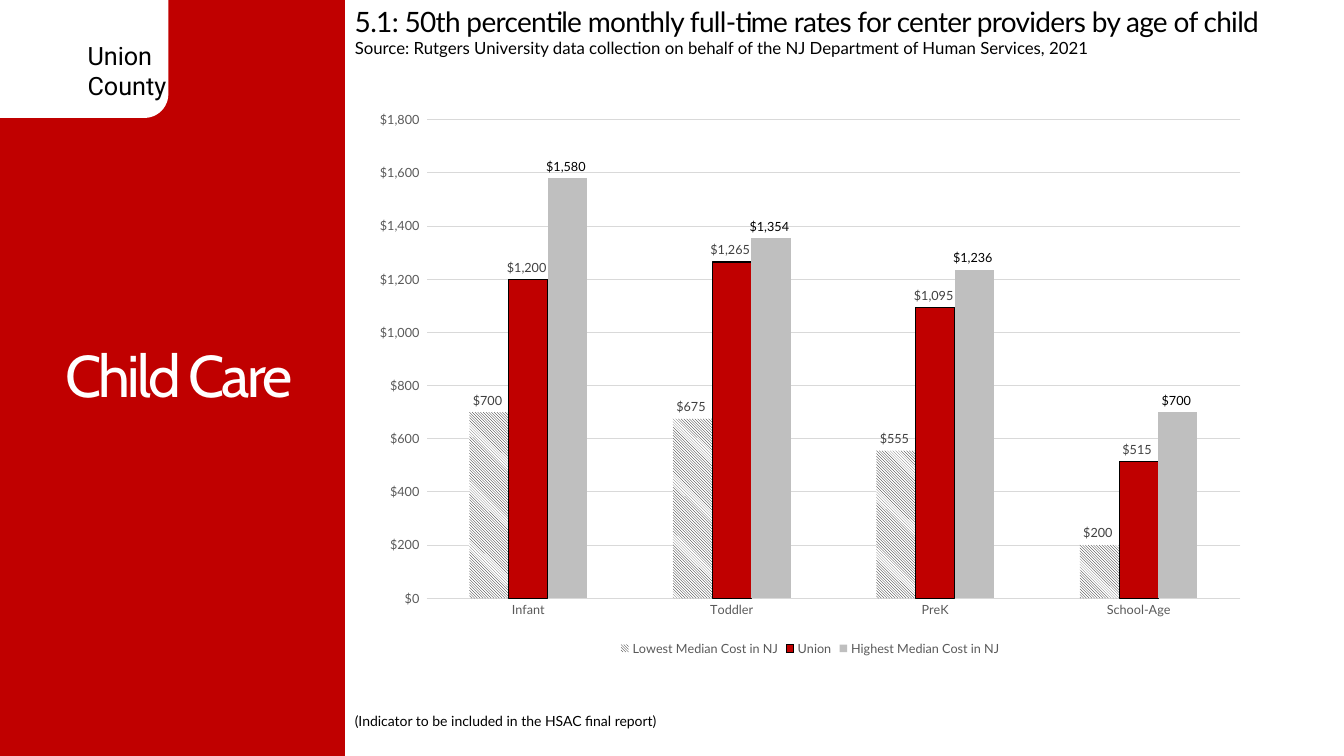
from lxml import etree
from pptx import Presentation
from pptx.chart.data import CategoryChartData
from pptx.dml.color import RGBColor
from pptx.enum.chart import XL_CHART_TYPE, XL_LABEL_POSITION, XL_LEGEND_POSITION, XL_TICK_MARK
from pptx.enum.dml import MSO_PATTERN
from pptx.enum.shapes import MSO_SHAPE
from pptx.enum.text import MSO_ANCHOR, MSO_AUTO_SIZE, PP_ALIGN
from pptx.util import Inches, Pt

RECTANGLE, ROUNDED = MSO_SHAPE.RECTANGLE, MSO_SHAPE.ROUNDED_RECTANGLE
TOP, MIDDLE = MSO_ANCHOR.TOP, MSO_ANCHOR.MIDDLE
LEFT, CENTER, JUSTIFY = PP_ALIGN.LEFT, PP_ALIGN.CENTER, PP_ALIGN.JUSTIFY
NO_AUTOSIZE = MSO_AUTO_SIZE.NONE
COLUMNS = XL_CHART_TYPE.COLUMN_CLUSTERED
OUTSIDE_END = XL_LABEL_POSITION.OUTSIDE_END
LEGEND_BOTTOM = XL_LEGEND_POSITION.BOTTOM
NO_TICK = XL_TICK_MARK.NONE
DIAGONAL = MSO_PATTERN.LIGHT_DOWNWARD_DIAGONAL

RED, WHITE, BLACK = "C00000", "FFFFFF", "000000"
SILVER, PALE, GREY, DARK = "BFBFBF", "D9D9D9", "595959", "404040"
DOLLARS = '"$"#,##0_);[Red]\\("$"#,##0\\)'

AGES = ["Infant", "Toddler", "PreK", "School-Age"]
RATES = {
    "Lowest Median Cost in NJ": [700, 675, 555, 200],
    "Union": [1200, 1265, 1095, 515],
    "Highest Median Cost in NJ": [1580, 1354, 1236, 700],
}


def colour(hex_string):
    return RGBColor.from_string(hex_string)


def set_font(font, size, color=BLACK, name="Lato"):
    font.size, font.name, font.bold = Pt(size), name, False
    font.color.rgb = colour(color)


def set_line(line, color):
    line.color.rgb = colour(color)
    line.width = Pt(0.75)


def add_panel(slide, shape_type, place, fill):
    panel = slide.shapes.add_shape(shape_type, *map(Inches, place))
    panel.shadow.inherit = False
    panel.fill.solid()
    panel.fill.fore_color.rgb = colour(fill)
    panel.line.fill.background()


def write(box, text, size, color=BLACK, name="Lato", align=LEFT,
          anchor=TOP, line_spacing=1.0, letter_spacing=0):
    """Fill a box with one paragraph per line of text."""
    frame = box.text_frame
    frame.word_wrap = True
    frame.auto_size = NO_AUTOSIZE
    frame.vertical_anchor = anchor
    for index, line in enumerate(text.split("\n")):
        para = frame.add_paragraph() if index else frame.paragraphs[0]
        para.alignment = align
        para.line_spacing = line_spacing
        span = para.add_run()
        span.text = line
        set_font(span.font, size, color, name)
        if letter_spacing:
            span.font._element.set("spc", str(int(letter_spacing * 100)))


def add_text(slide, place, text, size, **text_format):
    box = slide.shapes.add_textbox(*map(Inches, place))
    write(box, text, size, **text_format)


def place_title(slide, place, text, size, **text_format):
    """Move the title placeholder and bring it in front of the panels."""
    title = slide.shapes.title
    title.left, title.top, title.width, title.height = map(Inches, place)
    write(title, text, size, **text_format)
    slide.shapes._spTree.append(title._element)


def format_axes(chart):
    for axis in (chart.category_axis, chart.value_axis):
        axis.major_tick_mark = axis.minor_tick_mark = NO_TICK
        set_font(axis.tick_labels.font, 9, GREY)
    set_line(chart.category_axis.format.line, PALE)
    values = chart.value_axis
    values.minimum_scale, values.maximum_scale, values.major_unit = 0, 1800, 200
    values.format.line.fill.background()
    set_line(values.major_gridlines.format.line, PALE)
    values.tick_labels.number_format = DOLLARS
    values.tick_labels.number_format_is_linked = False


def label_series(series, color):
    labels = series.data_labels
    labels.show_value = True
    labels.position = OUTSIDE_END
    labels.number_format = DOLLARS
    labels.number_format_is_linked = False
    set_font(labels.font, 9, color)


def add_rate_chart(slide, place):
    rates = CategoryChartData(number_format=DOLLARS)
    rates.categories = AGES
    for name, values in RATES.items():
        rates.add_series(name, values)
    chart = slide.shapes.add_chart(COLUMNS, *map(Inches, place), rates).chart
    set_font(chart.font, 10, name="Calibri")
    chart.has_title = False
    chart.has_legend = True
    chart.legend.position = LEGEND_BOTTOM
    chart.legend.include_in_layout = False
    set_font(chart.legend.font, 9, GREY)
    format_axes(chart)

    plot = chart.plots[0]
    plot.gap_width, plot.overlap = 219, 0
    plot.vary_by_categories = False
    lowest, union, highest = plot.series
    lowest.format.fill.patterned()
    lowest.format.fill.pattern = DIAGONAL
    lowest.format.fill.fore_color.rgb = colour(BLACK)
    lowest.format.fill.back_color.rgb = colour(WHITE)
    for series, fill in ((union, RED), (highest, SILVER)):
        series.format.fill.solid()
        series.format.fill.fore_color.rgb = colour(fill)
    set_line(union.format.line, BLACK)
    for series, color in ((lowest, DARK), (union, DARK), (highest, BLACK)):
        series.invert_if_negative = False
        label_series(series, color)


def main():
    deck = Presentation()
    deck.slide_width, deck.slide_height = Inches(13.33), Inches(7.5)
    page = deck.slides.add_slide(deck.slide_layouts.get_by_name("Title Only"))

    add_panel(page, RECTANGLE, (0, 0, 3.42, 7.5), RED)
    add_panel(page, ROUNDED, (-0.33, -0.25, 2, 1.42), WHITE)
    add_text(page, (0.77, 0.35, 1, 0.71), "Union\nCounty", 18, name="Roboto")
    place_title(page, (0, 0.75, 3.55, 6), "Child Care", 42, color=WHITE, name="Cabin",
                align=CENTER, anchor=MIDDLE, line_spacing=0.9, letter_spacing=-2)
    add_text(page, (3.42, 0, 9.86, 0.44),
             "5.1: 50th percentile monthly full-time rates for center providers by age of child",
             20, letter_spacing=-0.5)
    add_text(page, (3.42, 0.33, 9.19, 0.3),
             "Source: Rutgers University data collection on behalf of "
             "the NJ Department of Human Services, 2021", 12)
    add_text(page, (3.42, 6.95, 9.49, 0.41),
             "(Indicator to be included in the HSAC final report)",
             10, align=JUSTIFY, anchor=MIDDLE)
    add_rate_chart(page, (3.59, 1, 8.89, 5.55))

    deck.save("out.pptx")


if __name__ == "__main__":
    main()
